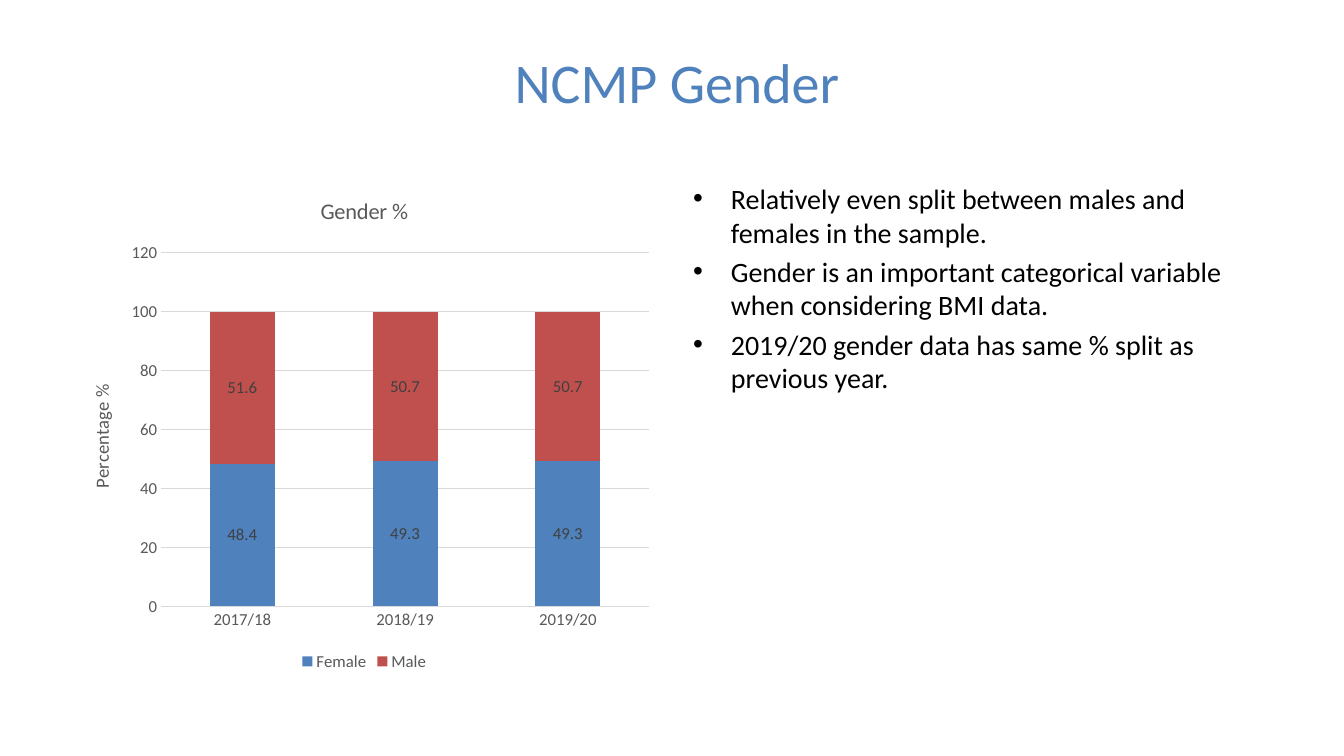
import pptx
import pptx.chart.data
import pptx.dml.color
import pptx.enum.chart
import pptx.enum.text
import pptx.util
from lxml import etree
from pptx.dml.color import RGBColor
from pptx.util import Cm, Pt

FONT = "Calibri"
BLUE = RGBColor(0x4F, 0x81, 0xBD)
RED = RGBColor(0xC0, 0x50, 0x4D)
BLACK = RGBColor(0, 0, 0)
GREY = RGBColor(0x59, 0x59, 0x59)
DARK_GREY = RGBColor(0x40, 0x40, 0x40)
LIGHT_GREY = RGBColor(0xD9, 0xD9, 0xD9)

TITLE = "NCMP Gender"
CHART_TITLE = "Gender %"
AXIS_TITLE = "Percentage %"
YEARS = ["2017/18", "2018/19", "2019/20"]
SERIES = [
    ("Female", (48.4, 49.3, 49.3), BLUE),
    ("Male", (51.6, 50.7, 50.7), RED),
]
POINTS = [
    "Relatively even split between males and females in the sample.",
    "Gender is an important categorical variable when considering BMI data.",
    "2019/20 gender data has same % split as previous year.",
]

CONTENT_TOP, CONTENT_WIDTH, CONTENT_HEIGHT = Cm(4.45), Cm(14.96), Cm(12.57)
CHART_LEFT, POINTS_LEFT = Cm(1.7), Cm(17.22)
BULLET_INDENT = Cm(0.95)


def style_font(font, size, color):
    font.name = FONT
    font.size = Pt(size)
    font.bold = False
    font.color.rgb = color


def add_title(slide):
    title = slide.shapes.title
    title.left, title.top, title.width, title.height = Cm(0.79), Cm(0.46), Cm(32.54), Cm(3.18)
    title.text_frame.text = TITLE
    title.text_frame.vertical_anchor = pptx.enum.text.MSO_ANCHOR.MIDDLE
    paragraph = title.text_frame.paragraphs[0]
    paragraph.alignment = pptx.enum.text.PP_ALIGN.CENTER
    style_font(paragraph.runs[0].font, 40, BLUE)


def title_text(holder, text, size):
    holder.text_frame.text = text
    style_font(holder.text_frame.paragraphs[0].runs[0].font, size, GREY)


def add_gender_chart(slide):
    data = pptx.chart.data.CategoryChartData()
    data.categories = YEARS
    for name, values, color in SERIES:
        data.add_series(name, values)
    chart = slide.shapes.add_chart(
        pptx.enum.chart.XL_CHART_TYPE.COLUMN_STACKED,
        CHART_LEFT, CONTENT_TOP, CONTENT_WIDTH, CONTENT_HEIGHT, data).chart
    style_font(chart.font, 10, BLACK)
    chart.has_title = True
    title_text(chart.chart_title, CHART_TITLE, 16)
    chart.chart_title.include_in_layout = False

    for axis in (chart.category_axis, chart.value_axis):
        axis.major_tick_mark = pptx.enum.chart.XL_TICK_MARK.NONE
        axis.minor_tick_mark = pptx.enum.chart.XL_TICK_MARK.NONE
        style_font(axis.tick_labels.font, 12, GREY)
    value_axis = chart.value_axis
    value_axis.minimum_scale, value_axis.maximum_scale, value_axis.major_unit = 0, 120, 20
    value_axis.has_major_gridlines = True
    value_axis.format.line.fill.background()
    value_axis.has_title = True
    title_text(value_axis.axis_title, AXIS_TITLE, 13.3)
    for line in (chart.category_axis.format.line, value_axis.major_gridlines.format.line):
        line.color.rgb = LIGHT_GREY
        line.width = Pt(0.75)

    chart.has_legend = True
    chart.legend.position = pptx.enum.chart.XL_LEGEND_POSITION.BOTTOM
    chart.legend.include_in_layout = False
    style_font(chart.legend.font, 12, GREY)

    plot = chart.plots[0]
    plot.gap_width, plot.overlap = 150, 100
    plot.vary_by_categories = False
    for series, (name, values, color) in zip(plot.series, SERIES):
        series.format.fill.solid()
        series.format.fill.fore_color.rgb = color
        labels = series.data_labels
        labels.show_value = True
        labels.position = pptx.enum.chart.XL_LABEL_POSITION.CENTER
        style_font(labels.font, 12, DARK_GREY)


def add_points(slide):
    box = slide.shapes.add_textbox(POINTS_LEFT, CONTENT_TOP, CONTENT_WIDTH, CONTENT_HEIGHT)
    frame = box.text_frame
    frame.word_wrap = True
    frame.text = "\n".join(POINTS)
    for index, paragraph in enumerate(frame.paragraphs):
        if index:
            paragraph.space_before = Pt(4)
        properties = paragraph._p.get_or_add_pPr()
        properties.set("marL", str(BULLET_INDENT))
        properties.set("indent", str(-BULLET_INDENT))
        namespace = properties.nsmap["a"]
        etree.SubElement(properties, f"{{{namespace}}}buFont", typeface="Arial")
        etree.SubElement(properties, f"{{{namespace}}}buChar", char="•")
        style_font(paragraph.runs[0].font, 20, BLACK)


def main():
    presentation = pptx.Presentation()
    presentation.slide_width, presentation.slide_height = Cm(33.87), Cm(19.05)
    slide = presentation.slides.add_slide(presentation.slide_layouts.get_by_name("Title Only"))
    add_title(slide)
    add_gender_chart(slide)
    add_points(slide)
    presentation.save("out.pptx")


if __name__ == "__main__":
    main()
